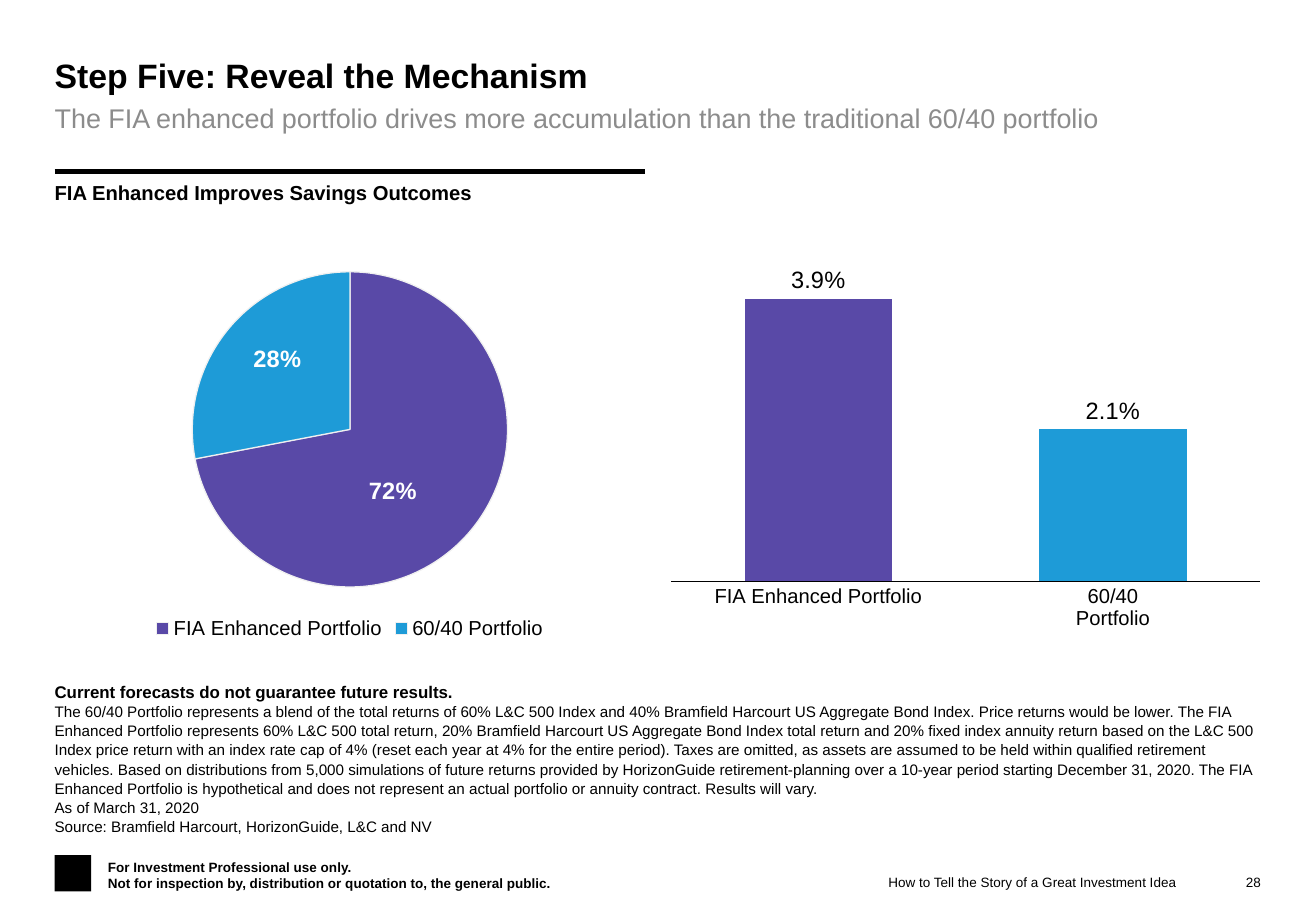
from lxml.etree import SubElement
from pptx import Presentation
from pptx.chart.data import CategoryChartData
from pptx.dml.color import RGBColor
from pptx.enum.chart import XL_CHART_TYPE, XL_LABEL_POSITION, XL_LEGEND_POSITION, XL_TICK_MARK
from pptx.enum.shapes import MSO_CONNECTOR, MSO_SHAPE
from pptx.enum.text import MSO_ANCHOR, PP_ALIGN
from pptx.oxml import parse_xml
from pptx.oxml.ns import nsdecls, qn
from pptx.util import Pt

PURPLE, BLUE, BLACK, GREY, WHITE = "5949A7", "1E9BD7", "000000", "8C8C8C", "FFFFFF"
LEFT, WIDTH, HALF = 32.4, 715, 350
CHART_TOP, CHART_HEIGHT = 151.2, 230.4


def style_font(font, size, color=BLACK, bold=False):
    font.name, font.size, font.bold = "Arial", Pt(size), bold
    font.color.rgb = RGBColor.from_string(color)


def write_text(sp, box, lines, anchor=MSO_ANCHOR.TOP, align=PP_ALIGN.LEFT, spacing=1.0):
    """Place a text shape and fill it with (text, size, colour, bold) lines."""
    sp.left, sp.top, sp.width, sp.height = [Pt(v) for v in box]
    tf = sp.text_frame
    tf.margin_left = tf.margin_right = tf.margin_top = tf.margin_bottom = 0
    tf.word_wrap = True
    tf.vertical_anchor = anchor
    tf.text = "\n".join(line[0] for line in lines)
    for p, (_, size, color, bold) in zip(tf.paragraphs, lines):
        p.alignment = align
        p.line_spacing = spacing
        p.space_before = Pt(0)
        style_font(p.runs[0].font, size, color, bold)


prs = Presentation()
prs.slide_width, prs.slide_height = Pt(780), Pt(540)
s = prs.slides.add_slide(prs.slide_layouts[5])

# Title
write_text(s.shapes.title, (LEFT, 32.4, WIDTH, 24.5),
           [("Step Five: Reveal the Mechanism", 20, BLACK, True)])

# Subtitle, section label, disclosure and footer
disclosure = " ".join([
    "The 60/40 Portfolio represents a blend of the total returns of 60% L&C 500 Index and 40% "
    "Bramfield Harcourt US Aggregate Bond Index. Price returns would be lower.",
    "The FIA Enhanced Portfolio represents 60% L&C 500 total return, 20% Bramfield Harcourt US "
    "Aggregate Bond Index total return and 20% fixed index annuity return based on the L&C 500 "
    "Index price return with an index rate cap of 4% (reset each year at 4% for the entire period).",
    "Taxes are omitted, as assets are assumed to be held within qualified retirement vehicles.",
    "Based on distributions from 5,000 simulations of future returns provided by HorizonGuide "
    "retirement-planning over a 10-year period starting December 31, 2020.",
    "The FIA Enhanced Portfolio is hypothetical and does not represent an actual portfolio or "
    "annuity contract. Results will vary.",
])
top, middle, bottom = MSO_ANCHOR.TOP, MSO_ANCHOR.MIDDLE, MSO_ANCHOR.BOTTOM
texts = [
    ((LEFT, 60, WIDTH, 49.7), top, PP_ALIGN.LEFT, 1.0,
     [("The FIA enhanced portfolio drives more accumulation than the traditional 60/40 portfolio",
       16, GREY, False)]),
    ((LEFT, 106.6, HALF, 35), top, PP_ALIGN.LEFT, 1.0,
     [("FIA Enhanced Improves Savings Outcomes", 12, BLACK, True)]),
    ((LEFT, 406.8, WIDTH, 88.6), bottom, PP_ALIGN.LEFT, 1.05,
     [("Current forecasts do not guarantee future results.", 10, BLACK, True),
      (disclosure, 9, BLACK, False),
      ("As of March 31, 2020", 9, BLACK, False),
      ("Source: Bramfield Harcourt, HorizonGuide, L&C and NV", 9, BLACK, False)]),
    ((64, 509, 296, 19.4), bottom, PP_ALIGN.LEFT, 1.0,
     [("For Investment Professional use only.", 8, BLACK, True),
      ("Not for inspection by, distribution or quotation to, the general public.",
       8, BLACK, True)]),
    ((497.5, 517.7, 200, 10.8), middle, PP_ALIGN.RIGHT, 1.0,
     [("How to Tell the Story of a Great Investment Idea", 8, BLACK, False)]),
    ((724.3, 517.7, 23, 10.8), middle, PP_ALIGN.RIGHT, 1.0, [("28", 8, BLACK, False)]),
]
for box, anchor, align, spacing, lines in texts:
    sp = s.shapes.add_textbox(0, 0, 0, 0)
    write_text(sp, box, lines, anchor, align, spacing)

# Rule above the section label
rule = s.shapes.add_connector(MSO_CONNECTOR.STRAIGHT, Pt(LEFT), Pt(101.5),
                              Pt(LEFT + HALF), Pt(101.5))
rule.line.color.rgb = RGBColor.from_string(BLACK)
rule.line.width = Pt(3)
SubElement(rule._element.spPr, qn("a:effectLst"))

# Footer emblem
emblem = s.shapes.add_shape(MSO_SHAPE.RECTANGLE, Pt(LEFT), Pt(506.9), Pt(21.6), Pt(21.6))
emblem.shadow.inherit = False
emblem.fill.solid()
emblem.fill.fore_color.rgb = RGBColor.from_string(BLACK)
emblem.line.fill.background()

# Charts: shared data, point colours and labels
charts = []
for kind, left, second, values, fmt, size, label_color in [
    (XL_CHART_TYPE.PIE, LEFT, "60/40 Portfolio", (0.72, 0.28), "0%", 12, WHITE),
    (XL_CHART_TYPE.COLUMN_CLUSTERED, LEFT + WIDTH - HALF, "60/40\nPortfolio",
     (0.039, 0.021), "0.0%", 10, BLACK),
]:
    data = CategoryChartData(number_format=fmt)
    data.categories = ["FIA Enhanced Portfolio", second]
    data.add_series("Series 1", values)
    chart = s.shapes.add_chart(kind, Pt(left), Pt(CHART_TOP), Pt(HALF), Pt(CHART_HEIGHT),
                               data).chart
    chart.has_title = chart.has_legend = False
    style_font(chart.font, size)
    series = chart.plots[0].series[0]
    for i, color in enumerate((PURPLE, BLUE)):
        fill = series.points[i].format.fill
        fill.solid()
        fill.fore_color.rgb = RGBColor.from_string(color)
    labels = series.data_labels
    labels.show_value = True
    labels.number_format, labels.number_format_is_linked = fmt, False
    style_font(labels.font, 14, label_color, label_color == WHITE)
    charts.append(chart)
pie, columns = charts

# Pie: slice outlines, shifted labels and legend
for i, (dx, dy) in enumerate([(-0.03, 0.03), (-0.02, -0.05)]):
    point = pie.plots[0].series[0].points[i]
    point.format.line.color.rgb = RGBColor.from_string("F0F0F0")
    point.format.line.width = Pt(0.75)
    label = point.data_label
    style_font(label.font, 14, WHITE, True)
    label.position = XL_LABEL_POSITION.CENTER
    label._dLbl.insert(1, parse_xml(
        f'<c:layout {nsdecls("c")}><c:manualLayout><c:x val="{dx}"/><c:y val="{dy}"/>'
        '</c:manualLayout></c:layout>'))
pie.has_legend = True
pie.legend.position = XL_LEGEND_POSITION.BOTTOM
pie.legend.include_in_layout = False
style_font(pie.legend.font, 12)

# Columns: axes, gaps and plot area
plot = columns.plots[0]
plot.vary_by_categories = False
plot.gap_width, plot.overlap = 100, -10
plot.series[0].data_labels.position = XL_LABEL_POSITION.OUTSIDE_END
axis = columns.category_axis
axis.major_tick_mark = axis.minor_tick_mark = XL_TICK_MARK.NONE
axis.format.line.color.rgb = RGBColor.from_string(BLACK)
axis.format.line.width = Pt(0.75)
style_font(axis.tick_labels.font, 12)
returns = columns.value_axis
returns.visible = returns.has_major_gridlines = False
returns.minimum_scale, returns.maximum_scale = 0, 0.045
area = columns._chartSpace.chart.plotArea
for old in area.findall(qn("c:layout")):
    area.remove(old)
area.insert(0, parse_xml(
    f'<c:layout {nsdecls("c")}><c:manualLayout><c:layoutTarget val="inner"/>'
    '<c:xMode val="edge"/><c:yMode val="edge"/><c:x val="0"/><c:y val="0"/>'
    '<c:w val="1"/><c:h val="0.84"/></c:manualLayout></c:layout>'))

prs.save("out.pptx")
